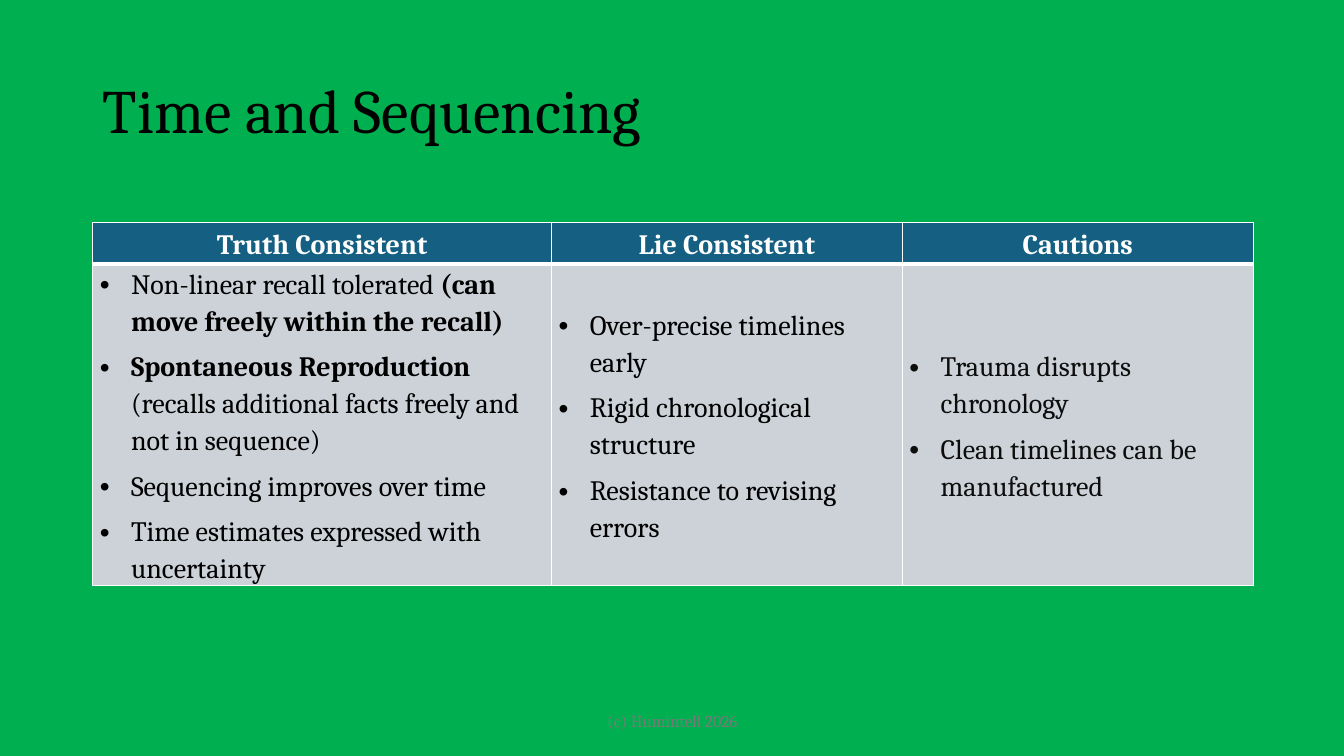
from dataclasses import dataclass

from lxml import etree
from pptx import Presentation
from pptx import util as u
from pptx.dml.color import RGBColor
from pptx.enum import text as t
from pptx.oxml import ns


@dataclass(frozen=True)
class Theme:
    """Colours, type sizes and font of the slide."""
    font: str = "Cambria"
    background: str = "00B050"
    header: str = "156082"
    body: str = "CCD2D8"
    white: str = "FFFFFF"
    black: str = "000000"
    soft_black: str = "0D0D0D"
    grey: str = "797979"
    title_size: int = 44
    table_size: int = 20
    footer_size: int = 12


THEME = Theme()
COLUMNS = [
    ("Truth Consistent", 4.55, THEME.black, [
        [("Non-linear recall tolerated ", False),
         ("(can move freely within the recall)", True)],
        [("Spontaneous Reproduction ", True),
         ("(recalls additional facts freely and not in sequence)", False)],
        [("Sequencing improves over time", False)],
        [("Time estimates expressed with uncertainty", False)],
    ]),
    ("Lie Consistent", 3.48, THEME.black, [
        [("Over-precise timelines early", False)],
        [("Rigid chronological structure", False)],
        [("Resistance to revising errors", False)],
    ]),
    ("Cautions", 3.48, THEME.soft_black, [
        [("Trauma disrupts chronology", False)],
        [("Clean timelines can be manufactured", False)],
    ]),
]


def write(frame, paragraphs, *, size, color, align=t.PP_ALIGN.LEFT,
          spacing=1.0, after=0, bulleted=False):
    """Fill a text frame with paragraphs of (wording, bold) runs."""
    frame.word_wrap = True
    for index, runs in enumerate(paragraphs):
        paragraph = frame.paragraphs[0] if index == 0 else frame.add_paragraph()
        if bulleted:
            properties = paragraph._p.get_or_add_pPr()
            properties.set("marL", str(u.Inches(0.31)))
            properties.set("indent", str(u.Inches(-0.31)))
            etree.SubElement(properties, ns.qn("a:buFont"), typeface="Arial")
            etree.SubElement(properties, ns.qn("a:buChar"), char="•")
        paragraph.alignment = align
        paragraph.line_spacing = spacing
        paragraph.space_after = u.Pt(after)
        for wording, bold in runs:
            run = paragraph.add_run()
            run.text = wording
            run.font.name = THEME.font
            run.font.size = u.Pt(size)
            run.font.bold = bold
            run.font.color.rgb = RGBColor.from_string(color)


def style_cell(cell, fill, **edge_widths):
    """Give a table cell its margins, borders and fill."""
    cell.vertical_anchor = t.MSO_ANCHOR.MIDDLE
    cell.margin_left = cell.margin_right = u.Inches(0.07)
    cell.margin_top = cell.margin_bottom = 0
    properties = cell._tc.get_or_add_tcPr()
    for edge in "LRTB":
        width = u.Pt(edge_widths.get(edge, 1))
        border = etree.SubElement(properties, ns.qn(f"a:ln{edge}"), w=str(width))
        solid = etree.SubElement(border, ns.qn("a:solidFill"))
        etree.SubElement(solid, ns.qn("a:srgbClr"), val=THEME.white)
    cell.fill.solid()
    cell.fill.fore_color.rgb = RGBColor.from_string(fill)


def add_title(slide, left, top, width, height):
    """Place the slide title in its placeholder."""
    title = slide.shapes.title
    title.left, title.top = u.Inches(left), u.Inches(top)
    title.width, title.height = u.Inches(width), u.Inches(height)
    frame = title.text_frame
    frame.auto_size = t.MSO_AUTO_SIZE.NONE
    frame.vertical_anchor = t.MSO_ANCHOR.MIDDLE
    write(frame, [[("Time and Sequencing", False)]], size=THEME.title_size,
          color=THEME.black, spacing=0.9)


def add_comparison(slide, left, top, width, height):
    """Draw the table of indicators, one column for each heading."""
    header_height = 0.41
    table = slide.shapes.add_table(
        2, len(COLUMNS), u.Inches(left), u.Inches(top),
        u.Inches(width), u.Inches(height)).table
    table.horz_banding = False
    table.rows[0].height = u.Inches(header_height)
    table.rows[1].height = u.Inches(height - header_height)
    for index, (heading, column_width, color, points) in enumerate(COLUMNS):
        table.columns[index].width = u.Inches(column_width)
        header, body = table.cell(0, index), table.cell(1, index)
        style_cell(header, THEME.header, B=3)
        style_cell(body, THEME.body, T=3)
        write(header.text_frame, [[(heading, True)]], size=THEME.table_size,
              color=THEME.white, align=t.PP_ALIGN.CENTER, spacing=1.15, after=6)
        write(body.text_frame, points, size=THEME.table_size, color=color,
              spacing=1.15, after=6, bulleted=True)


def add_copyright(slide, left, top, width, height):
    """Place the centred copyright line."""
    frame = slide.shapes.add_textbox(
        u.Inches(left), u.Inches(top), u.Inches(width), u.Inches(height)).text_frame
    frame.vertical_anchor = t.MSO_ANCHOR.MIDDLE
    write(frame, [[("(c) Humintell 2026", False)]], size=THEME.footer_size,
          color=THEME.grey, align=t.PP_ALIGN.CENTER)


def main():
    """Build the slide and save it."""
    deck = Presentation()
    deck.slide_width, deck.slide_height = u.Inches(13.33), u.Inches(7.5)
    slide = deck.slides.add_slide(deck.slide_layouts.get_by_name("Title Only"))
    slide.background.fill.solid()
    slide.background.fill.fore_color.rgb = RGBColor.from_string(THEME.background)
    add_title(slide, 0.92, 0.4, 11.5, 1.45)
    add_comparison(slide, 0.92, 2.21, 11.51, 3.59)
    add_copyright(slide, 4.42, 6.95, 4.5, 0.4)
    deck.save("out.pptx")


if __name__ == "__main__":
    main()
